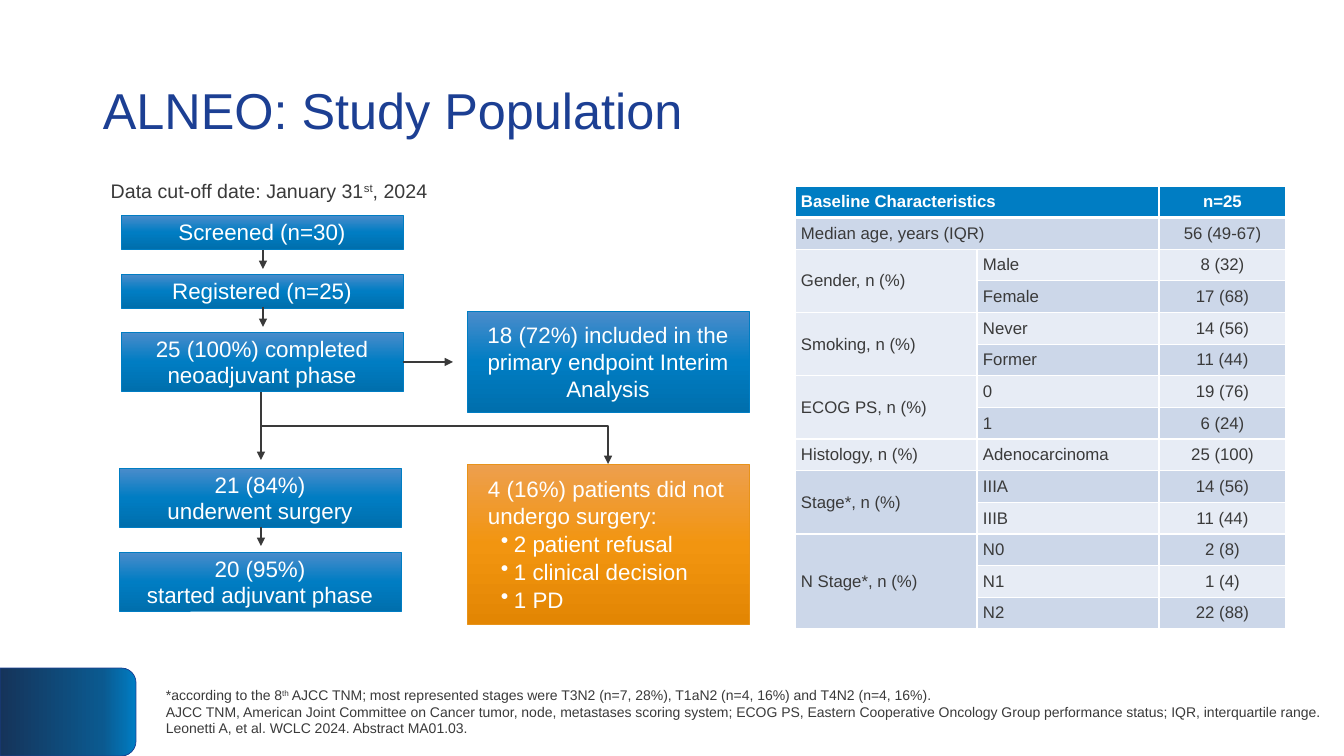
from lxml.etree import SubElement
from pptx import Presentation
from pptx.dml.color import RGBColor
from pptx.enum.shapes import MSO_CONNECTOR as Connector, MSO_SHAPE as Shape
from pptx.enum.text import MSO_ANCHOR as Anchor, PP_ALIGN as Align
from pptx.oxml.ns import qn
from pptx.util import Emu, Pt

EMU_PER_PX = 914400 / 100.8
COLORS = {
    "title": "1C3F93", "text": "3A3A3A", "white": "FFFFFF",
    "blue": "007DC3", "orange": "E8931A",
    "band_dark": "CCD7E9", "band_light": "E7ECF5",
}
GRADIENTS = {
    "blue": [(0, "4B8CCB"), (50, "007DC3"), (100, "006FAD")],
    "orange": [(0, "ED9F4E"), (50, "F29510"), (100, "E38603")],
    "corner": [(0, "007DC3"), (25, "0B598F"), (100, "15345A")],
}
# left, top, width, height, text
STEPS = [
    (121, 215, 282, 34, "Screened (n=30)"),
    (121, 274, 282, 34, "Registered (n=25)"),
    (121, 332, 282, 59, "25 (100%) completed neoadjuvant phase"),
    (119, 468, 282, 59, "21 (84%)\nunderwent surgery"),
    (119, 552, 282, 59, "20 (95%)\nstarted adjuvant phase"),
    (467, 311, 282, 101, "18 (72%) included in the primary endpoint Interim Analysis"),
]
ARROWS = [
    (263, 250, 263, 269), (263, 307, 263, 327), (261, 392, 261, 460),
    (261, 527, 261, 546), (403, 362, 453, 362),
]
NO_SURGERY = ["4 (16%) patients did not undergo surgery:",
              "2 patient refusal", "1 clinical decision", "1 PD"]
FOOTNOTES = [
    "*according to the 8^th^ AJCC TNM; most represented stages were "
    "T3N2 (n=7, 28%), T1aN2 (n=4, 16%) and T4N2 (n=4, 16%).",
    "AJCC TNM, American Joint Committee on Cancer tumor, node, metastases scoring "
    "system; ECOG PS, Eastern Cooperative Oncology Group performance status; "
    "IQR, interquartile range.\nLeonetti A, et al. WCLC 2024. Abstract MA01.03.",
]
# characteristic -> (level, patients); a level of None spans both label columns
BASELINE = [
    ("Baseline Characteristics", [(None, "n=25")]),
    ("Median age, years (IQR)", [(None, "56 (49-67)")]),
    ("Gender, n (%)", [("Male", "8 (32)"), ("Female", "17 (68)")]),
    ("Smoking, n (%)", [("Never", "14 (56)"), ("Former", "11 (44)")]),
    ("ECOG PS, n (%)", [("0", "19 (76)"), ("1", "6 (24)")]),
    ("Histology, n (%)", [("Adenocarcinoma", "25 (100)")]),
    ("Stage*, n (%)", [("IIIA", "14 (56)"), ("IIIB", "11 (44)")]),
    ("N Stage*, n (%)", [("N0", "2 (8)"), ("N1", "1 (4)"), ("N2", "22 (88)")]),
]


def px(value):
    return Emu(round(value * EMU_PER_PX))


def rgb(name):
    return RGBColor.from_string(COLORS[name])


def add_bullet(paragraph):
    props = paragraph._p.get_or_add_pPr()
    props.set("marL", str(px(26)))
    props.set("indent", str(-px(13)))
    color = SubElement(SubElement(props, qn("a:buClr")), qn("a:srgbClr"))
    color.set("val", COLORS["white"])
    SubElement(props, qn("a:buChar")).set("char", "•")


def write(frame, paragraphs, size, color="text", align=Align.LEFT, bold=False,
          bulleted=False, spacing=None):
    """Fill a frame; ^x^ marks superscript, and bulleted spares the first paragraph."""
    for index, text in enumerate(paragraphs):
        paragraph = frame.add_paragraph() if index else frame.paragraphs[0]
        paragraph.alignment = align
        if spacing:
            paragraph.line_spacing = spacing
        if bulleted and index:
            paragraph.space_before = Pt(0.8)
            add_bullet(paragraph)
        for line_number, line in enumerate(text.split("\n")):
            if line_number:
                paragraph.add_line_break()
            for part_number, part in enumerate(line.split("^")):
                run = paragraph.add_run()
                run.text = part
                font = run.font
                font.name, font.size, font.bold = "Arial", Pt(size), bold
                font.color.rgb = rgb(color)
                if part_number % 2:
                    font._element.set("baseline", "30000")


def add_label(slide, bounds, paragraphs, wrap=True, anchor=Anchor.MIDDLE, **text_format):
    frame = slide.shapes.add_textbox(*map(px, bounds)).text_frame
    frame.word_wrap = wrap
    frame.vertical_anchor = anchor
    write(frame, paragraphs, **text_format)


def fill_gradient(shape, stops):
    """Run the stops from top to bottom of the unrotated shape."""
    shape.fill.gradient()
    shape.fill.gradient_angle = 270
    stop_list = shape._element.spPr.find(qn("a:gradFill")).find(qn("a:gsLst"))
    for old_stop in list(stop_list):
        stop_list.remove(old_stop)
    for percent, color in stops:
        stop = SubElement(stop_list, qn("a:gs"), pos=str(percent * 1000))
        SubElement(stop, qn("a:srgbClr"), val=color)


def add_panel(slide, bounds, gradient, line, kind=Shape.RECTANGLE):
    panel = slide.shapes.add_shape(kind, *map(px, bounds))
    panel.shadow.inherit = False
    fill_gradient(panel, GRADIENTS[gradient])
    panel.line.color.rgb = rgb(line)
    panel.line.width = Pt(0.5)
    return panel


def add_box(slide, bounds, paragraphs, color="blue", inset=0, **text_format):
    frame = add_panel(slide, bounds, color, color).text_frame
    frame.word_wrap = True
    frame.vertical_anchor = Anchor.MIDDLE
    frame.margin_left = px(inset)
    frame.margin_top = frame.margin_right = frame.margin_bottom = 0
    write(frame, paragraphs, size=16, color="white", **text_format)


def add_arrow(slide, points, kind=Connector.STRAIGHT):
    arrow = slide.shapes.add_connector(kind, *map(px, points))
    arrow.line.color.rgb = rgb("text")
    arrow.line.width = Pt(1.5)
    SubElement(arrow.line._get_or_add_ln(), qn("a:tailEnd"), type="triangle")
    SubElement(arrow._element.spPr, qn("a:effectLst"))
    return arrow


def add_corner_arrow(slide, points):
    """Draw an arrow that runs across, then down."""
    arrow = add_arrow(slide, points, Connector.ELBOW)
    arrow._element.spPr.find(qn("a:prstGeom")).set("prst", "bentConnector2")


def style_cell(cell, row):
    cell.margin_left = cell.margin_right = px(6)
    cell.margin_top = cell.margin_bottom = px(3)
    cell.vertical_anchor = Anchor.MIDDLE
    props = cell._tc.get_or_add_tcPr()
    for side in ("lnL", "lnR", "lnT", "lnB"):
        thick = (row == 0 and side == "lnB") or (row == 1 and side == "lnT")
        border = SubElement(props, qn(f"a:{side}"), w=str(Pt(3 if thick else 1)))
        SubElement(SubElement(border, qn("a:solidFill")), qn("a:srgbClr"),
                   val=COLORS["white"])
    cell.fill.solid()
    band = "band_dark" if row % 2 else "band_light"
    cell.fill.fore_color.rgb = rgb(band if row else "blue")


def add_baseline_table(slide, bounds, widths):
    row_count = sum(len(levels) for _, levels in BASELINE)
    table = slide.shapes.add_table(row_count, len(widths), *map(px, bounds)).table
    for column, width in zip(table.columns, widths):
        column.width = px(width)
    for row, table_row in enumerate(table.rows):
        table_row.height = Emu(px(bounds[3]) // row_count)
        for cell in table_row.cells:
            style_cell(cell, row)
    row = 0
    for characteristic, levels in BASELINE:
        look = {"size": 12, "color": "text" if row else "white", "bold": row == 0}
        label = table.cell(row, 0)
        write(label.text_frame, [characteristic], **look)
        spans_columns = levels[0][0] is None
        if spans_columns or len(levels) > 1:
            label.merge(table.cell(row + len(levels) - 1, int(spans_columns)))
        for level, patients in levels:
            if level:
                write(table.cell(row, 1).text_frame, [level], **look)
            write(table.cell(row, 2).text_frame, [patients], align=Align.CENTER, **look)
            row += 1


def main():
    deck = Presentation()
    deck.slide_width, deck.slide_height = px(1344), px(756)
    slide = deck.slides.add_slide(deck.slide_layouts[6])

    corner = add_panel(slide, (24, 644, 88, 136), "corner", "title",
                       Shape.ROUND_2_SAME_RECTANGLE)
    corner.rotation = 90
    add_label(slide, (93, 40, 1159, 146), ["ALNEO: Study Population"],
              size=36, color="title", spacing=0.9)
    add_label(slide, (156, 667, 1188, 89), FOOTNOTES, size=10)
    add_label(slide, (99, 174, 340, 34), ["Data cut-off date: January 31^st^, 2024"],
              wrap=False, anchor=Anchor.TOP, size=14, align=Align.CENTER)

    for *bounds, text in STEPS:
        add_box(slide, bounds, [text], align=Align.CENTER)
    add_box(slide, (467, 464, 282, 160), NO_SURGERY, "orange", inset=21, bulleted=True)
    for points in ARROWS:
        add_arrow(slide, points)
    add_corner_arrow(slide, (262, 426, 608, 464))
    add_baseline_table(slide, (795, 186, 491, 443), (182, 182, 127))
    deck.save("out.pptx")


if __name__ == "__main__":
    main()
